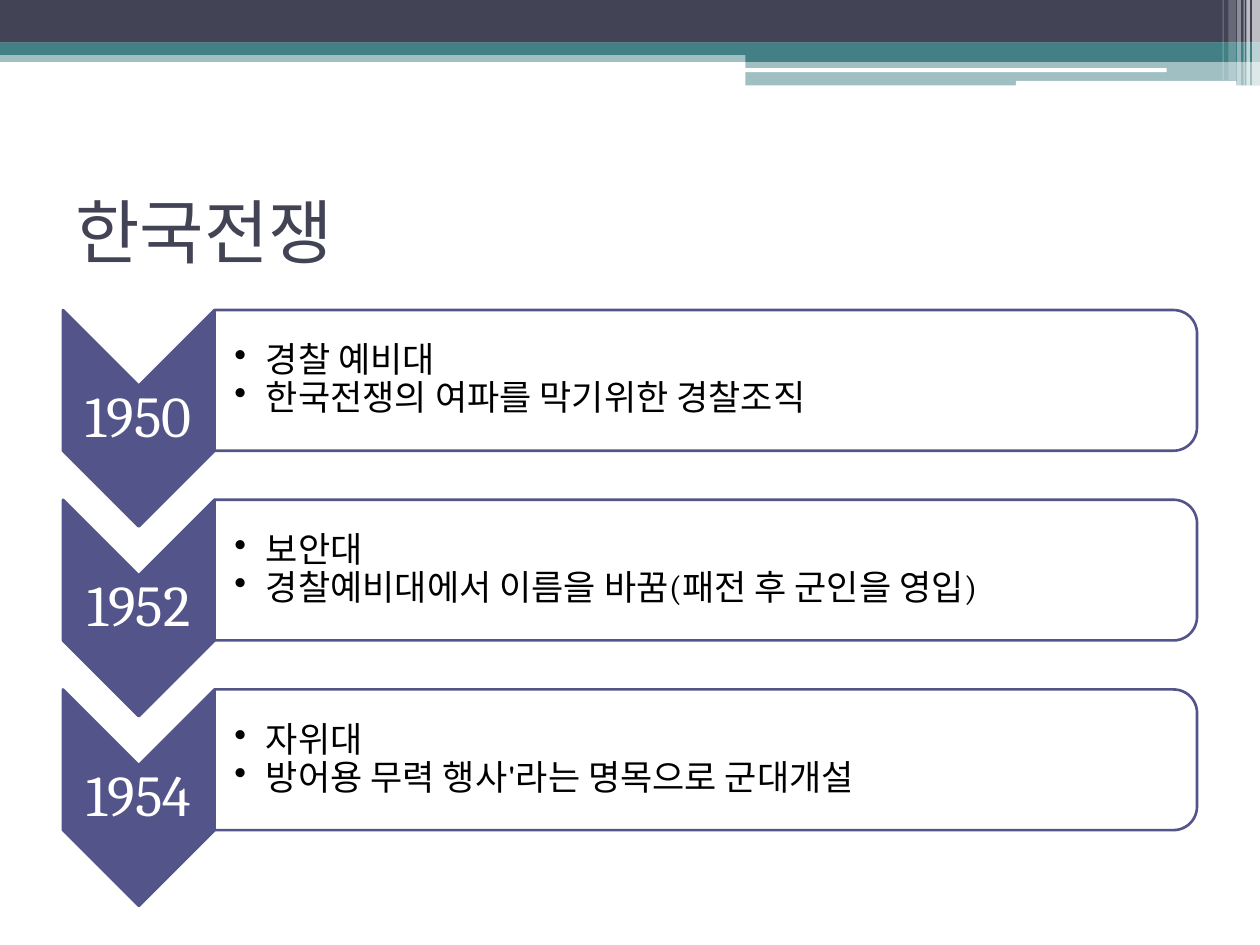
import pptx
import pptx.dml.color
import pptx.enum.shapes
import pptx.enum.text
import pptx.oxml.ns
import pptx.util
from lxml import etree

Pt = pptx.util.Pt
RGBColor = pptx.dml.color.RGBColor
SHAPE = pptx.enum.shapes.MSO_SHAPE
ALIGN = pptx.enum.text.PP_ALIGN
MIDDLE = pptx.enum.text.MSO_ANCHOR.MIDDLE
qn = pptx.oxml.ns.qn

SLATE = RGBColor(0x42, 0x44, 0x56)
TEAL = RGBColor(0x43, 0x80, 0x86)
INDIGO = RGBColor(0x53, 0x54, 0x8A)
WHITE = RGBColor(0xFF, 0xFF, 0xFF)
BLACK = RGBColor(0, 0, 0)

# Header bands: shape, left, top, width, height, colour, opacity in percent
BANDS = [
    (SHAPE.RECTANGLE, 0, 28.8, 720, 6.6, TEAL, 50),
    (SHAPE.RECTANGLE, 0, 0, 720, 24.4, SLATE, 100),
    (SHAPE.RECTANGLE, 0, 24.2, 720, 7.2, TEAL, 100),
    (SHAPE.RECTANGLE, 426, 28.2, 294, 7.2, TEAL, 100),
    (SHAPE.RECTANGLE, 426, 34.7, 294, 14.1, TEAL, 50),
    (SHAPE.ROUNDED_RECTANGLE, 425.5, 39, 241.2, 2.2, WHITE, 100),
    (SHAPE.ROUNDED_RECTANGLE, 580.5, 46.3, 126, 2.9, WHITE, 100),
]
# Stripes at the right end: left, width, height, opacity in percent
STRIPES = [
    (715.5, 4.5, 49, 65),
    (712.2, 2.1, 49, 65),
    (710.6, 0.7, 49, 60),
    (707, 2.1, 49, 40),
    (702, 4.3, 46, 20),
    (698.6, 0.7, 46, 30),
]
EVENTS = [
    ("1950", ["경찰 예비대", "한국전쟁의 여파를 막기위한 경찰조직"]),
    ("1952", ["보안대", "경찰예비대에서 이름을 바꿈(패전 후 군인을 영입)"]),
    ("1954", ["자위대", "방어용 무력 행사'라는 명목으로 군대개설"]),
]
FIRST_TOP, ROW_PITCH = 177.2, 108.4
CHEVRON_LEFT, CHEVRON_WIDTH, CHEVRON_HEIGHT = 36, 86.6, 123.7
PANEL_LEFT, PANEL_WIDTH, PANEL_HEIGHT = 122.6, 561.4, 80.4


def add_filled(shapes, kind, left, top, width, height, colour, opacity=100, outline=None):
    shape = shapes.add_shape(kind, Pt(left), Pt(top), Pt(width), Pt(height))
    shape.shadow.inherit = False
    shape.fill.solid()
    shape.fill.fore_color.rgb = colour
    if opacity < 100:
        tint = shape.fill._xPr.find(qn("a:solidFill"))[0]
        etree.SubElement(tint, qn("a:alpha"), val=str(opacity * 1000))
    if outline is None:
        shape.line.fill.background()
    else:
        shape.line.color.rgb = outline
        shape.line.width = Pt(1.5)
    return shape


def add_quarter_turned(shapes, kind, left, top, width, height, colour, opacity=100):
    """Place a shape turned by 90 degrees so that it covers the given box."""
    shift = (width - height) / 2
    shape = add_filled(shapes, kind, left + shift, top - shift, height, width,
                       colour, opacity, INDIGO)
    shape.rotation = 90


def add_text_frame(shapes, left, top, width, height, inset, left_inset):
    frame = shapes.add_textbox(Pt(left), Pt(top), Pt(width), Pt(height)).text_frame
    frame.word_wrap = True
    frame.vertical_anchor = MIDDLE
    frame.margin_top = frame.margin_right = frame.margin_bottom = Pt(inset)
    frame.margin_left = Pt(left_inset)
    return frame


def add_run(paragraph, words, size, font, colour):
    run = paragraph.add_run()
    run.text = words
    run.font.size = Pt(size)
    run.font.name = font
    run.font.color.rgb = colour


def add_bullet(paragraph):
    properties = paragraph._p.get_or_add_pPr()
    properties.set("marL", str(Pt(18)))
    properties.set("indent", str(-Pt(18)))
    etree.SubElement(properties, qn("a:buChar"), char="•")


def add_header(shapes):
    for band in BANDS:
        add_filled(shapes, *band)
    for left, width, height, opacity in STRIPES:
        add_filled(shapes, SHAPE.RECTANGLE, left, 0, width, height, WHITE, opacity)


def set_title(title, words):
    title.left, title.top, title.width, title.height = Pt(36), Pt(90), Pt(648), Pt(84)
    title.text_frame.vertical_anchor = MIDDLE
    heading = title.text_frame.paragraphs[0]
    heading.alignment = ALIGN.LEFT
    add_run(heading, words, 40, "Cabin", SLATE)


def add_event(shapes, top, year, facts):
    # Year chevron
    add_quarter_turned(shapes, SHAPE.CHEVRON, CHEVRON_LEFT, top,
                       CHEVRON_WIDTH, CHEVRON_HEIGHT, INDIGO)
    year_frame = add_text_frame(shapes, CHEVRON_LEFT, top + CHEVRON_WIDTH / 2,
                                CHEVRON_WIDTH, 37.1, 1.5, 1.5)
    year_line = year_frame.paragraphs[0]
    year_line.alignment = ALIGN.CENTER
    year_line.line_spacing = 0.9
    add_run(year_line, year, 33, "Cambria", WHITE)

    # Panel with the facts
    add_quarter_turned(shapes, SHAPE.ROUND_2_SAME_RECTANGLE, PANEL_LEFT, top,
                       PANEL_WIDTH, PANEL_HEIGHT, WHITE, 90)
    facts_frame = add_text_frame(shapes, PANEL_LEFT, top + 3.9, PANEL_WIDTH - 4,
                                 PANEL_HEIGHT - 7.8, 0.9, 11.4)
    for index, fact in enumerate(facts):
        line = facts_frame.add_paragraph() if index else facts_frame.paragraphs[0]
        line.level = 1
        line.line_spacing = 0.9
        add_bullet(line)
        add_run(line, fact, 20, "Cambria", BLACK)


def main():
    deck = pptx.Presentation()
    deck.slide_width, deck.slide_height = Pt(720), Pt(540)
    slide = deck.slides.add_slide(deck.slide_layouts[5])
    add_header(slide.shapes)
    set_title(slide.shapes.title, "한국전쟁")
    timeline = slide.shapes.add_group_shape()
    for row, (year, facts) in enumerate(EVENTS):
        add_event(timeline.shapes, FIRST_TOP + row * ROW_PITCH, year, facts)
    deck.save("out.pptx")


if __name__ == "__main__":
    main()
